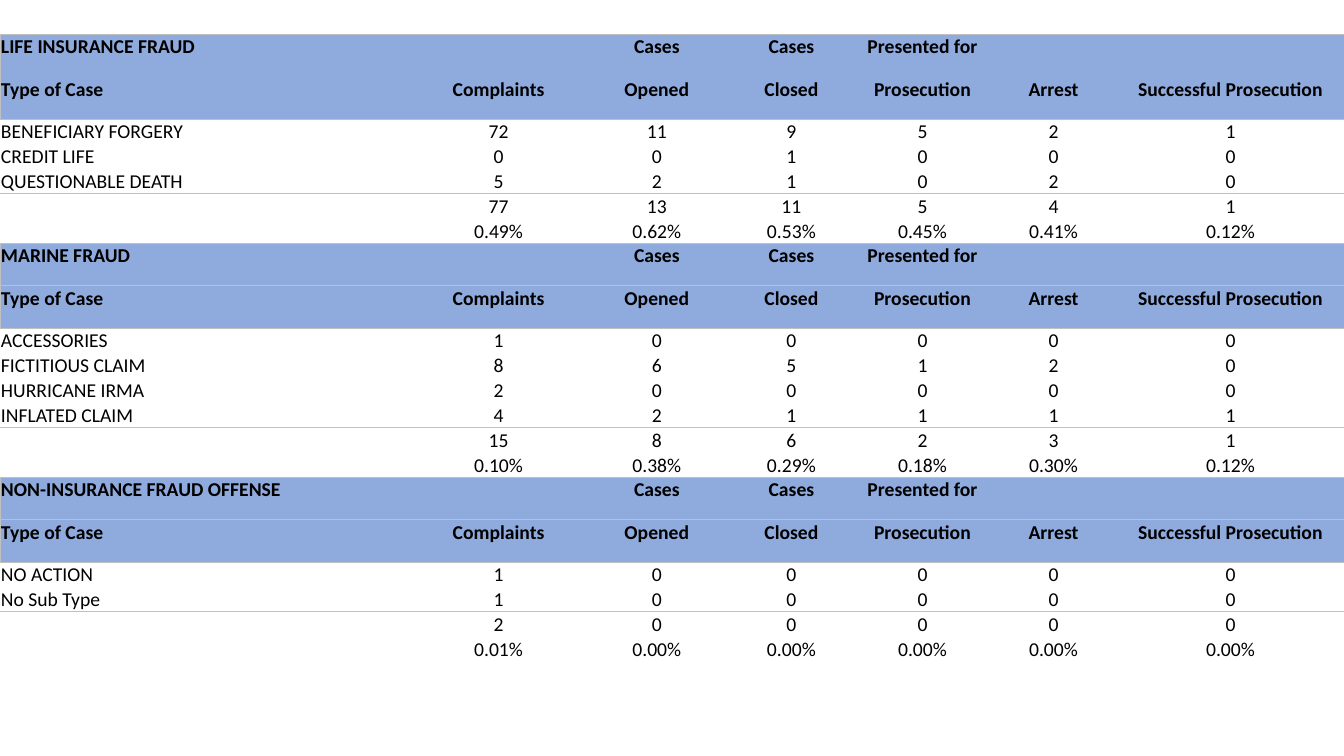
from lxml.etree import SubElement
from pptx import Presentation
from pptx.dml.color import RGBColor
from pptx.enum.text import MSO_ANCHOR as Anchor, PP_ALIGN as Align
from pptx.oxml import parse_xml
from pptx.oxml.ns import nsdecls, qn
from pptx.util import Inches, Pt

COLORS = {"header": "8FAADC", "rule": "C0C0C0", "text": "000000"}
FONT, SIZE = "Calibri", Pt(14)
NO_GRID_STYLE = "{2D5ABB26-0587-4C30-8999-92F81FD0307C}"

COLUMN_WIDTHS = [4.08, 1.73, 1.41, 1.26, 1.34, 1.26, 2.25]
HEADER_HEIGHT, DATA_HEIGHT = 0.42, 0.22
HEADER_TOP = ["", "Cases", "Cases", "Presented for", "", ""]
HEADER_BOTTOM = ["Type of Case", "Complaints", "Opened", "Closed",
                 "Prosecution", "Arrest", "Successful Prosecution"]

# Each section: title, case rows, shares of the overall total
SECTIONS = [
    ("LIFE INSURANCE FRAUD",
     [("BENEFICIARY FORGERY", 72, 11, 9, 5, 2, 1),
      ("CREDIT LIFE", 0, 0, 1, 0, 0, 0),
      ("QUESTIONABLE DEATH", 5, 2, 1, 0, 2, 0)],
     ["0.49%", "0.62%", "0.53%", "0.45%", "0.41%", "0.12%"]),
    ("MARINE FRAUD",
     [("ACCESSORIES", 1, 0, 0, 0, 0, 0),
      ("FICTITIOUS CLAIM", 8, 6, 5, 1, 2, 0),
      ("HURRICANE IRMA", 2, 0, 0, 0, 0, 0),
      ("INFLATED CLAIM", 4, 2, 1, 1, 1, 1)],
     ["0.10%", "0.38%", "0.29%", "0.18%", "0.30%", "0.12%"]),
    ("NON-INSURANCE FRAUD OFFENSE",
     [("NO ACTION", 1, 0, 0, 0, 0, 0),
      ("No Sub Type", 1, 0, 0, 0, 0, 0)],
     ["0.01%", "0.00%", "0.00%", "0.00%", "0.00%", "0.00%"]),
]


def section_rows(title, cases, shares):
    """Return (values, is_header, ruled edges) for every row of a section."""
    totals = [sum(column) for column in list(zip(*cases))[1:]]
    rows = [([title] + HEADER_TOP, True, "T"), (HEADER_BOTTOM, True, "B")]
    rows += [(case, False, "") for case in cases[:-1]]
    rows += [(cases[-1], False, "B"), ([""] + totals, False, ""),
             ([""] + shares, False, "")]
    return rows


def add_borders(cell, edges):
    properties = cell._tc.get_or_add_tcPr()
    for edge in "LRTB":
        if edge in edges:
            properties.append(parse_xml(
                f'<a:ln{edge} {nsdecls("a")} w="6350"><a:solidFill>'
                f'<a:srgbClr val="{COLORS["rule"]}"/></a:solidFill></a:ln{edge}>'))


def fill_cell(cell, value, align, is_header, edges):
    cell.margin_left = cell.margin_right = cell.margin_top = Inches(0.01)
    cell.margin_bottom = 0
    cell.vertical_anchor = Anchor.TOP if is_header else Anchor.BOTTOM
    add_borders(cell, edges)
    if is_header:
        cell.fill.solid()
        cell.fill.fore_color.rgb = RGBColor.from_string(COLORS["header"])
    else:
        cell.fill.background()

    paragraph = cell.text_frame.paragraphs[0]
    paragraph.alignment = align
    font = paragraph.font
    font.name, font.size, font.bold = FONT, SIZE, is_header
    font.color.rgb = RGBColor.from_string(COLORS["text"])
    if value == "":
        # An empty cell keeps the row height of the text size
        SubElement(paragraph._p, qn("a:endParaRPr"), sz=str(int(SIZE.pt * 100)))
    else:
        paragraph.add_run().text = str(value)


def add_fraud_table(slide, left, top, width):
    rows = [row for section in SECTIONS for row in section_rows(*section)]
    heights = [Inches(HEADER_HEIGHT if is_header else DATA_HEIGHT)
               for _, is_header, _ in rows]
    table = slide.shapes.add_table(len(rows), len(COLUMN_WIDTHS), left, top,
                                   width, sum(heights)).table
    table.first_row = table.horz_banding = False
    table._tbl.tblPr.find(qn("a:tableStyleId")).text = NO_GRID_STYLE
    for column, share in zip(table.columns, COLUMN_WIDTHS):
        column.width = int(width * share / sum(COLUMN_WIDTHS))

    last = len(COLUMN_WIDTHS) - 1
    for row, height, (values, is_header, edges) in zip(table.rows, heights, rows):
        row.height = height
        for index, (cell, value) in enumerate(zip(row.cells, values)):
            sides = {0: "L", last: "R"}.get(index, "") if is_header else ""
            align = Align.LEFT if index == 0 else Align.CENTER
            fill_cell(cell, value, align, is_header, edges + sides)


def main():
    presentation = Presentation()
    presentation.slide_width = Inches(13.33)
    presentation.slide_height = Inches(7.5)
    slide = presentation.slides.add_slide(presentation.slide_layouts[6])
    add_fraud_table(slide, 0, Inches(0.34), presentation.slide_width)
    presentation.save("out.pptx")


if __name__ == "__main__":
    main()
